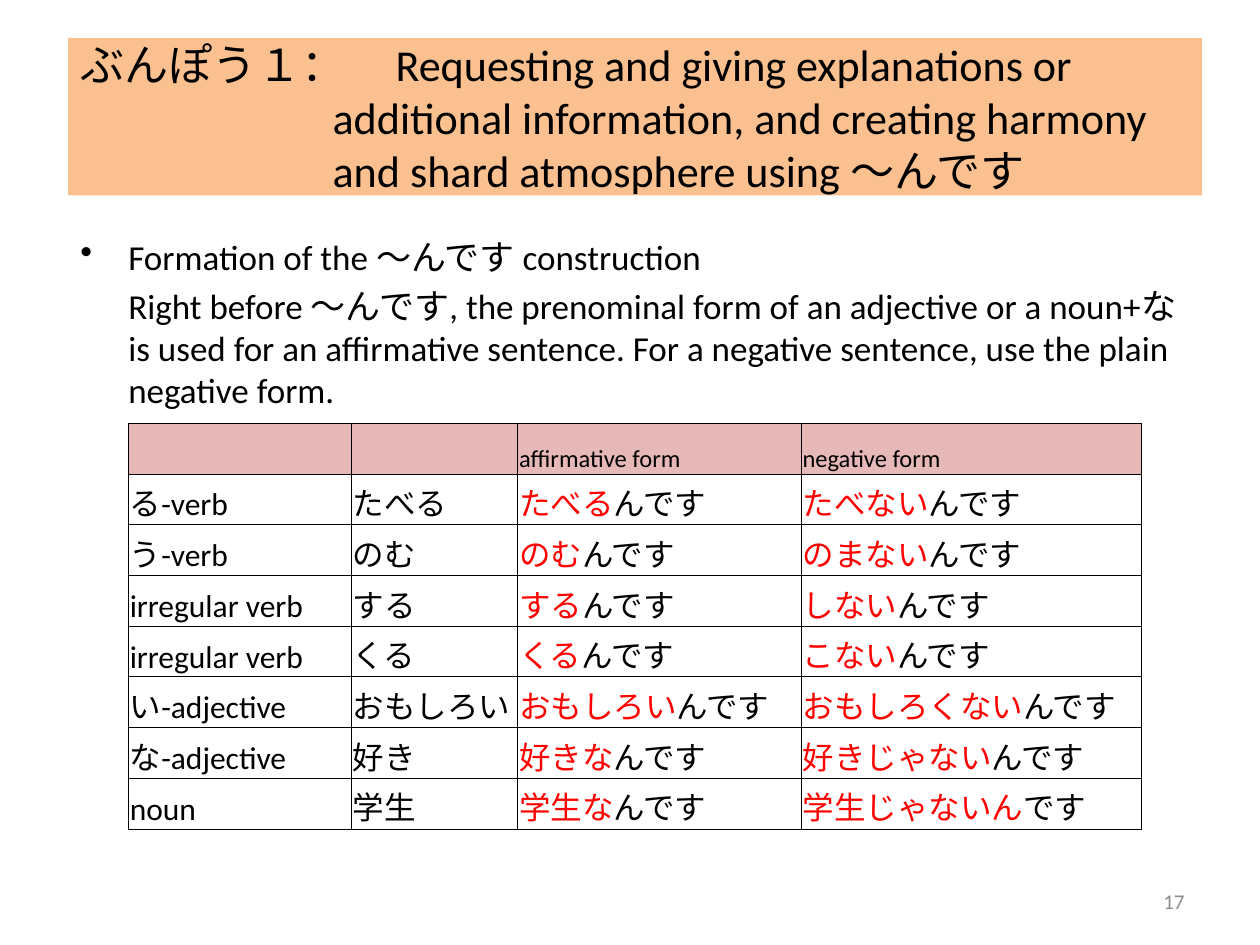
"""Build a grammar slide on the explanatory construction."""
from dataclasses import dataclass
from typing import NamedTuple

from pptx import Presentation
from pptx.dml.color import RGBColor as Rgb
from pptx.enum.text import MSO_ANCHOR as Anchor, MSO_AUTO_SIZE as Fit, PP_ALIGN as Align
from pptx.oxml import parse_xml
from pptx.oxml.ns import nsdecls
from pptx.util import Emu, Inches, Pt


@dataclass(frozen=True)
class Theme:
    latin: str = "Calibri"
    kana: str = "Arial"
    ink: str = "000000"
    key: str = "FF0000"
    mute: str = "8C8C8C"
    band: str = "FAC090"
    head: str = "E6B9B8"
    title: float = 25.2
    body: float = 20
    cell: float = 18
    label: float = 14
    foot: float = 12
    rule: float = 0.5


class Box(NamedTuple):
    col: float
    row: float
    wide: float
    high: float


class Part(NamedTuple):
    text: str
    face: str
    tint: str


class Form(NamedTuple):
    kind: str
    word: str
    yes: str
    no: str
    tail: str = "んです"


THEME = Theme()
UNIT = Inches(0.1)
TITLE = Box(5.4, 3, 90, 12.5)
BODY = Box(5.4, 18.2, 90, 15.5)
TABLE = Box(10.2, 33.6, 80.4, 32.2)
FOOT = Box(71.7, 69.5, 23.3, 4)
WIDTHS = (17.7, 13.2, 22.5, 27)
HEADS = ("", "", "affirmative form", "negative form")
FORMS = (
    Form("る-verb", "たべる", "たべる", "たべない"),
    Form("う-verb", "のむ", "のむ", "のまない"),
    Form("irregular verb", "する", "する", "しない"),
    Form("irregular verb", "くる", "くる", "こない"),
    Form("い-adjective", "おもしろい", "おもしろい", "おもしろくない"),
    Form("な-adjective", "好き", "好きな", "好きじゃない"),
    Form("noun", "学生", "学生な", "学生じゃないん", "です"),
)
HEADING = (
    "ぶんぽう１：\tRequesting and giving explanations or \v"
    "\tadditional information, and creating harmony\v"
    "\tand shard atmosphere using ～んです"
)
RULE = (
    ", the prenominal form of an adjective or a noun+な is used for an affirmative "
    "sentence. For a negative sentence, use the plain negative form."
)


def latin(text: str) -> Part:
    return Part(text, THEME.latin, THEME.ink)


def kana(text: str, tint: str = THEME.ink) -> Part:
    return Part(text, THEME.kana, tint)


def span(box: Box) -> tuple[Emu, ...]:
    return tuple(Emu(round(side * UNIT)) for side in box)


def style(font, size: float, face: str, tint: str) -> None:
    font.size, font.name = Pt(size), face
    font.color.rgb = Rgb.from_string(tint)


def write(para, parts: list[Part], size: float) -> None:
    if len(parts) == 1:
        para.text = parts[0].text
        style(para.font, size, *parts[0][1:])
        return
    para.font.size = Pt(size)
    for part in parts:
        run = para.add_run()
        run.text = part.text
        style(run.font, size, *part[1:])


def add_text(slide, box: Box, anchor: Anchor):
    frame = slide.shapes.add_textbox(*span(box)).text_frame
    frame.word_wrap, frame.vertical_anchor = True, anchor
    return frame


def add_title(slide) -> None:
    shape = slide.shapes.title
    shape.left, shape.top, shape.width, shape.height = span(TITLE)
    shape.fill.solid()
    shape.fill.fore_color.rgb = Rgb.from_string(THEME.band)
    frame = shape.text_frame
    frame.auto_size, frame.vertical_anchor = Fit.NONE, Anchor.MIDDLE
    para = frame.paragraphs[0]
    write(para, [latin(HEADING)], THEME.title)
    para.alignment = Align.LEFT
    stops = "".join(f'<a:tab pos="{Inches(x)}" algn="l"/>' for x in (2, 2.5))
    props = para._p.get_or_add_pPr()
    props.insert(0, parse_xml(f'<a:tabLst {nsdecls("a")}>{stops}</a:tabLst>'))


def add_body(slide) -> None:
    frame = add_text(slide, BODY, Anchor.TOP)
    first, second = frame.paragraphs[0], frame.add_paragraph()
    write(first, [latin("Formation of the "), kana("～んです"),
                  latin(" construction")], THEME.body)
    write(second, [latin("Right before "), kana("～んです"), latin(RULE)], THEME.body)
    for para, dent in ((first, -0.38), (second, 0)):
        para.space_before = Pt(THEME.body * 0.2)
        props = para._p.get_or_add_pPr()
        props.set("marL", str(Inches(0.38)))
        props.set("indent", str(Inches(dent)))
    mark = f'<a:buChar {nsdecls("a")} char="•"/>'
    first._p.pPr.insert_element_before(parse_xml(mark), "a:tabLst", "a:defRPr")


def fill_cell(cell, parts: list[Part], size: float, shade: str = "") -> None:
    cell.margin_left = cell.margin_right = cell.margin_top = Inches(0.01)
    cell.margin_bottom = 0
    cell.vertical_anchor = Anchor.BOTTOM
    write(cell.text_frame.paragraphs[0], parts, size)
    props = cell._tc.get_or_add_tcPr()
    for side in "LRTB":
        props.append(parse_xml(
            f'<a:ln{side} {nsdecls("a")} w="{Pt(THEME.rule)}"><a:solidFill>'
            f'<a:srgbClr val="{THEME.ink}"/></a:solidFill></a:ln{side}>'))
    if shade:
        cell.fill.solid()
        cell.fill.fore_color.rgb = Rgb.from_string(shade)
    else:
        cell.fill.background()


def add_forms(slide) -> None:
    count = len(FORMS) + 1
    table = slide.shapes.add_table(count, len(WIDTHS), *span(TABLE)).table
    table.first_row = table.horz_banding = False
    for col, wide in zip(table.columns, WIDTHS):
        col.width = Emu(round(wide * UNIT))
    for row in table.rows:
        row.height = Emu(round(TABLE.high * UNIT / count))
    for col, head in enumerate(HEADS):
        fill_cell(table.cell(0, col), [latin(head)], THEME.label, THEME.head)
    for row, form in enumerate(FORMS, 1):
        cells = (
            [latin(form.kind)],
            [kana(form.word)],
            [kana(form.yes, THEME.key), kana("んです")],
            [kana(form.no, THEME.key), kana(form.tail)],
        )
        for col, parts in enumerate(cells):
            fill_cell(table.cell(row, col), parts, THEME.cell)


def add_foot(slide) -> None:
    para = add_text(slide, FOOT, Anchor.MIDDLE).paragraphs[0]
    write(para, [Part("17", THEME.latin, THEME.mute)], THEME.foot)
    para.alignment = Align.RIGHT


def main() -> None:
    deck = Presentation()
    deck.slide_width, deck.slide_height = Inches(10), Inches(7.5)
    slide = deck.slides.add_slide(deck.slide_layouts[5])
    for draw in (add_foot, add_title, add_body, add_forms):
        draw(slide)
    deck.save("out.pptx")


if __name__ == "__main__":
    main()
